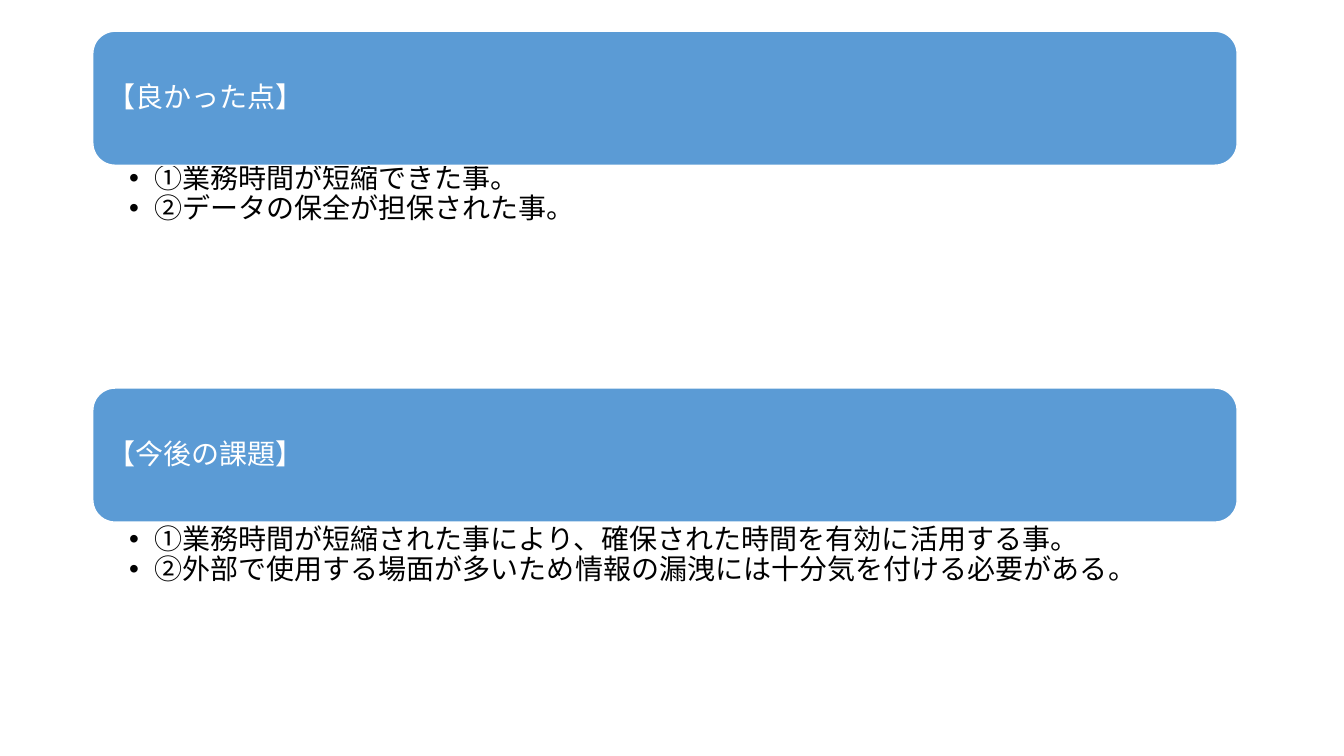
from dataclasses import dataclass

from lxml.etree import SubElement
from pptx import Presentation
from pptx.dml.color import RGBColor
from pptx.enum.shapes import MSO_SHAPE
from pptx.enum.text import MSO_ANCHOR, MSO_AUTO_SIZE, PP_ALIGN
from pptx.oxml.ns import qn
from pptx.shapes.placeholder import SlidePlaceholder
from pptx.slide import Slide
from pptx.text.text import _Paragraph as Paragraph
from pptx.util import Inches, Pt


@dataclass(frozen=True)
class Theme:
    font: str = "Noto Sans CJK JP"
    text_size: float = 20
    line_spacing: float = 0.9
    bar: RGBColor = RGBColor(0x5B, 0x9B, 0xD5)
    light: RGBColor = RGBColor(0xFF, 0xFF, 0xFF)
    dark: RGBColor = RGBColor(0x00, 0x00, 0x00)


@dataclass(frozen=True)
class Section:
    heading: str
    points: tuple[str, ...]
    bar_top: float
    list_top: float
    list_height: float


THEME = Theme()
LEFT, WIDTH, BAR_HEIGHT = 0.92, 11.35, 1.33
SECTIONS = (
    Section(
        "【良かった点】",
        ("①業務時間が短縮できた事。", "②データの保全が担保された事。"),
        bar_top=0.31, list_top=1.6, list_height=1.51,
    ),
    Section(
        "【今後の課題】",
        (
            "①業務時間が短縮された事により、確保された時間を有効に活用する事。",
            "②外部で使用する場面が多いため情報の漏洩には十分気を付ける必要がある。",
        ),
        bar_top=3.85, list_top=5.18, list_height=1.18,
    ),
)


def write_paragraph(paragraph: Paragraph, text: str, color: RGBColor) -> None:
    paragraph.alignment = PP_ALIGN.LEFT
    paragraph.line_spacing = THEME.line_spacing
    paragraph.space_before = paragraph.space_after = Pt(0)
    run = paragraph.add_run()
    run.text = text
    run.font.size = Pt(THEME.text_size)
    run.font.color.rgb = color
    run.font.name = THEME.font
    SubElement(run.font._element, qn("a:ea"), typeface=THEME.font)


def add_bullet(paragraph: Paragraph) -> None:
    properties = paragraph._p.get_or_add_pPr()
    properties.set("marL", str(Inches(0.25)))
    properties.set("indent", str(-Inches(0.25)))
    SubElement(properties, qn("a:buFont"), typeface="Arial")
    SubElement(properties, qn("a:buChar"), char="•")


def add_heading_bar(slide: Slide, section: Section) -> None:
    bar = slide.shapes.add_shape(
        MSO_SHAPE.ROUNDED_RECTANGLE,
        Inches(LEFT), Inches(section.bar_top), Inches(WIDTH), Inches(BAR_HEIGHT),
    )
    bar.shadow.inherit = False
    bar.fill.solid()
    bar.fill.fore_color.rgb = THEME.bar
    bar.line.color.rgb = THEME.light
    bar.line.width = Pt(1)
    frame = bar.text_frame
    frame.word_wrap = True
    frame.vertical_anchor = MSO_ANCHOR.MIDDLE
    frame.margin_left = frame.margin_right = Inches(0.08)
    frame.margin_top = frame.margin_bottom = Inches(0.08)
    write_paragraph(frame.paragraphs[0], section.heading, THEME.light)


def fill_list(body: SlidePlaceholder, section: Section) -> None:
    body.left, body.top = Inches(LEFT), Inches(section.list_top)
    body.width, body.height = Inches(WIDTH), Inches(section.list_height)
    frame = body.text_frame
    frame.word_wrap = True
    frame.auto_size = MSO_AUTO_SIZE.NONE
    frame.vertical_anchor = MSO_ANCHOR.TOP
    frame.margin_left, frame.margin_right = Inches(0.36), Inches(0.16)
    frame.margin_top = frame.margin_bottom = Inches(0.03)
    for index, point in enumerate(section.points):
        paragraph = frame.add_paragraph() if index else frame.paragraphs[0]
        paragraph.level = 1
        write_paragraph(paragraph, point, THEME.dark)
        add_bullet(paragraph)


def main() -> None:
    presentation = Presentation()
    presentation.slide_width = Inches(13.33)
    presentation.slide_height = Inches(7.5)
    two_content_layout = presentation.slide_layouts[3]
    slide = presentation.slides.add_slide(two_content_layout)
    title, *bodies = slide.placeholders
    title.element.getparent().remove(title.element)
    for section, body in zip(SECTIONS, bodies):
        add_heading_bar(slide, section)
        fill_list(body, section)
    presentation.save("out.pptx")


if __name__ == "__main__":
    main()
